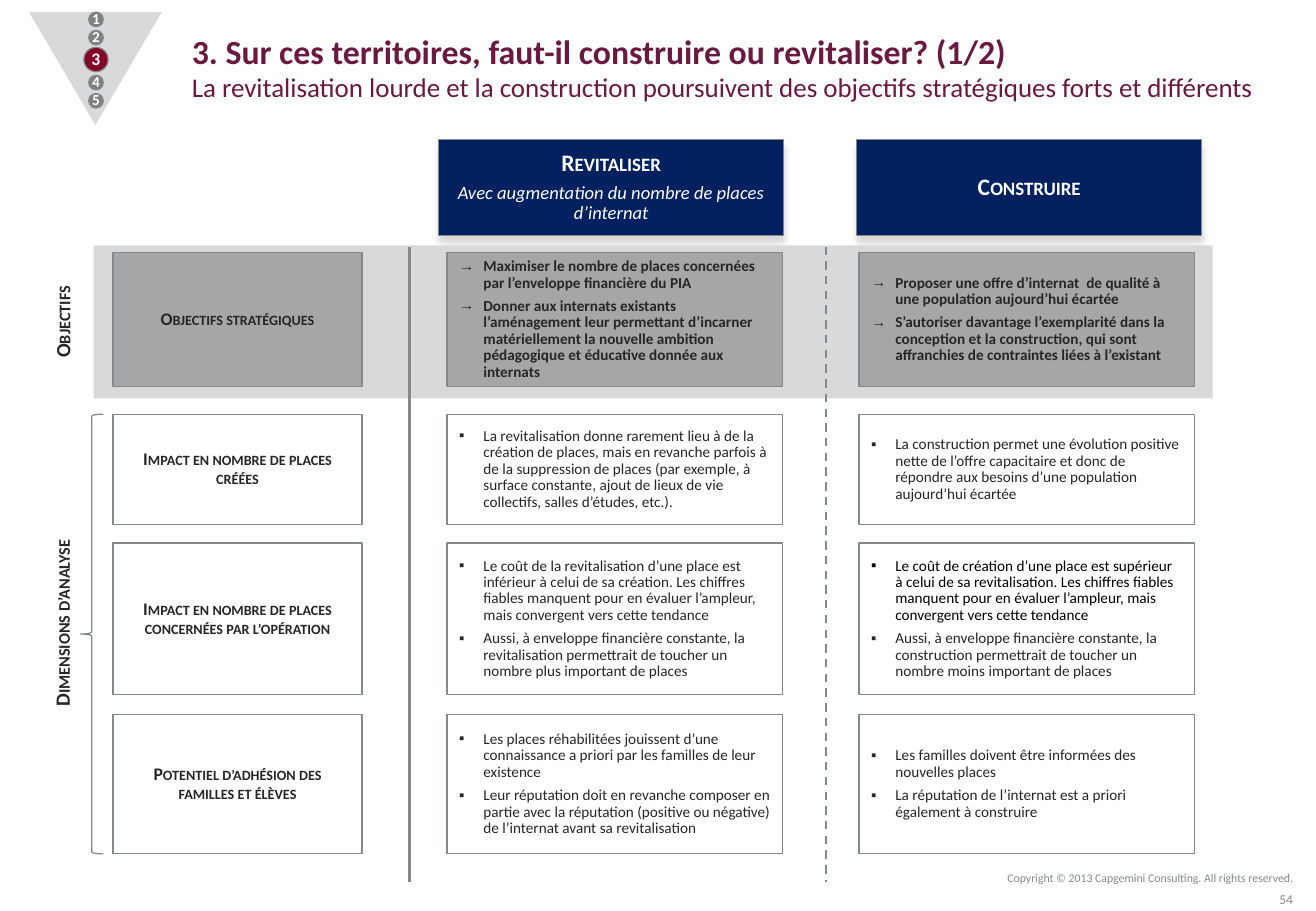
from lxml.etree import SubElement
from pptx import Presentation
from pptx.dml.color import RGBColor
from pptx.enum.dml import MSO_LINE
from pptx.enum.shapes import MSO_CONNECTOR, MSO_SHAPE
from pptx.enum.text import MSO_ANCHOR, PP_ALIGN
from pptx.oxml.ns import qn
from pptx.util import Inches, Pt

HUES = {"plum": "6A1A41", "edge": "85888B", "navy": "002060", "band": "D9D9D9",
        "goal": "A6A6A6", "white": "FFFFFF", "ink": "262626", "black": "000000",
        "red": "850027", "dot": "808080"}
LEFT, MID, RIGHT = PP_ALIGN.LEFT, PP_ALIGN.CENTER, PP_ALIGN.RIGHT


def hue(name):
    return RGBColor.from_string(HUES[name])


def draw(home, kind, at, fill=None, edge="edge"):
    """Add a preset shape, or a text box when kind is None."""
    frame = [Inches(v) for v in at]
    if kind is None:
        shape = home.add_textbox(*frame)
    else:
        shape = home.add_shape(kind, *frame)
        shape.shadow.inherit = False
        if fill:
            shape.fill.solid()
            shape.fill.fore_color.rgb = hue(fill)
        else:
            shape.fill.background()
        if edge:
            shape.line.color.rgb = hue(edge)
            shape.line.width = Pt(0.75)
        else:
            shape.line.fill.background()
    shape.text_frame.word_wrap = True
    shape.text_frame.vertical_anchor = MSO_ANCHOR.MIDDLE
    return shape


def write(shape, text, size, tone="ink", bold=False, italic=False, caps=False,
          align=MID, mark=None, lead=0.9, gap=4):
    """Append one paragraph, with small capitals or a bullet mark if asked."""
    frame = shape.text_frame
    first = not frame.text
    para = frame.paragraphs[0] if first else frame.add_paragraph()
    if mark:
        props = para._p.get_or_add_pPr()
        props.set("marL", str(Inches(0.2)))
        props.set("indent", str(-Inches(0.2)))
        SubElement(props, qn("a:buFont")).set("typeface", "Arial")
        SubElement(props, qn("a:buChar")).set("char", mark)
    para.alignment = align
    para.line_spacing = lead
    para.space_before = Pt(0 if first else gap)
    run = para.add_run()
    run.text = text
    font = run.font
    font.name, font.size, font.bold, font.italic = "Calibri", Pt(size), bold, italic
    font.color.rgb = hue(tone)
    if caps:
        run._r.get_or_add_rPr().set("cap", "small")


deck = Presentation()
deck.slide_width, deck.slide_height = Inches(10.83), Inches(7.5)
slide = deck.slides.add_slide(deck.slide_layouts[6])
shapes = slide.shapes
RECT = MSO_SHAPE.RECTANGLE

# Title and footer
title = draw(shapes, None, (1.48, 0.13, 9.35, 0.84))
for text, size, bold in [
        ("3. Sur ces territoires, faut-il construire ou revitaliser? (1/2)", 20, True),
        ("La revitalisation lourde et la construction poursuivent des objectifs "
         "stratégiques forts et différents", 16, False)]:
    write(title, text, size, "plum", bold, align=LEFT, lead=1, gap=0)
for text, size, at in [
        ("Copyright © 2013 Capgemini Consulting. All rights reserved.", 7,
         (7.57, 7.12, 3.17, 0.22)),
        ("54", 8, (8.21, 7.34, 2.53, 0.13))]:
    write(draw(shapes, None, at), text, size, "edge", align=RIGHT, lead=1)

# Column heads
for left, text, note in [
        (3.61, "Revitaliser", "Avec augmentation du nombre de places d’internat"),
        (7.05, "Construire", None)]:
    head = draw(shapes, RECT, (left, 1.15, 2.84, 0.79), "navy")
    effects = head._element.spPr.find(qn("a:effectLst"))
    shade = SubElement(effects, qn("a:outerShdw"), blurRad=str(Pt(4)),
                       dist=str(Pt(4)), dir="5400000", rotWithShape="0")
    SubElement(shade, qn("a:srgbClr")).set("val", HUES["band"])
    write(head, text, 14, "white", bold=True, caps=True)
    if note:
        write(head, note, 11, "white", italic=True)

# Band and column rules
draw(shapes, RECT, (0.77, 2.02, 9.21, 1.26), "band", None)
for x, width, dash in [(3.37, 2.25, None), (6.8, 1.25, MSO_LINE.DASH)]:
    rule = shapes.add_connector(MSO_CONNECTOR.STRAIGHT, Inches(x), Inches(2.03),
                                Inches(x), Inches(7.26))
    rule.line.color.rgb = hue("edge")
    rule.line.width = Pt(width)
    rule.line.dash_style = dash
    SubElement(rule._element.spPr, qn("a:effectLst"))

# Grid of cells
COLS = [(0.93, 2.05), (3.68, 2.76), (7.07, 2.76)]
ROWS = [(2.08, 1.1), (3.41, 0.91), (4.47, 1.25), (5.88, 1.15)]
CELLS = [
    ("Objectifs stratégiques",
     ["Maximiser le nombre de places concernées par l’enveloppe financière du PIA",
      "Donner aux internats existants l’aménagement leur permettant d’incarner "
      "matériellement la nouvelle ambition pédagogique et éducative donnée aux "
      "internats"],
     ["Proposer une offre d’internat  de qualité à une population aujourd’hui écartée",
      "S’autoriser davantage l’exemplarité dans la conception et la construction, "
      "qui sont affranchies de contraintes liées à l’existant"]),
    ("Impact en nombre de places créées",
     ["La revitalisation donne rarement lieu à de la création de places, mais en "
      "revanche parfois à de la suppression de places (par exemple, à surface "
      "constante, ajout de lieux de vie collectifs, salles d’études, etc.)."],
     ["La construction permet une évolution positive nette de l’offre capacitaire "
      "et donc de répondre aux besoins d’une population aujourd’hui écartée"]),
    ("Impact en nombre de places concernées par l’opération",
     ["Le coût de la revitalisation d’une place est inférieur à celui de sa "
      "création. Les chiffres fiables manquent pour en évaluer l’ampleur, mais "
      "convergent vers cette tendance",
      "Aussi, à enveloppe financière constante, la revitalisation permettrait de "
      "toucher un nombre plus important de places"],
     ["Le coût de création d’une place est supérieur à celui de sa "
      "revitalisation. Les chiffres fiables manquent pour en évaluer l’ampleur, "
      "mais convergent vers cette tendance",
      "Aussi, à enveloppe financière constante, la construction permettrait de "
      "toucher un nombre moins important de places"]),
    ("Potentiel d’adhésion des familles et élèves",
     ["Les places réhabilitées jouissent d’une connaissance a priori par les "
      "familles de leur existence",
      "Leur réputation doit en revanche composer en partie avec la réputation "
      "(positive ou négative) de l’internat avant sa revitalisation"],
     ["Les familles doivent être informées des nouvelles places",
      "La réputation de l’internat est a priori également à construire"]),
]
for row, ((top, high), (name, *lists)) in enumerate(zip(ROWS, CELLS)):
    goal = row == 0
    fill = "goal" if goal else "white"
    boxes = [draw(shapes, RECT, (left, top, wide, high), fill) for left, wide in COLS]
    write(boxes[0], name, 10.5, bold=True, caps=True)
    for col, (box, points) in enumerate(zip(boxes[1:], lists)):
        for n, point in enumerate(points):
            tone = "black" if (row, col, n) == (2, 1, 0) else "ink"
            write(box, point, 9, tone, bold=goal, align=LEFT,
                  mark="→" if goal else "▪")

# Side labels and brace
for text, at in [("Objectifs", (0.05, 2.51, 0.95, 0.28)),
                 ("Dimensions d’analyse", (-0.7, 4.99, 2.44, 0.28))]:
    side = draw(shapes, None, at)
    side.rotation = 270
    write(side, text, 12, bold=True, caps=True)
draw(shapes, MSO_SHAPE.LEFT_BRACE, (0.66, 3.41, 0.19, 3.62))

# Step marker
steps = shapes.add_group_shape().shapes
draw(steps, MSO_SHAPE.ISOSCELES_TRIANGLE, (0.24, 0.1, 1.09, 0.93), "band",
     None).rotation = 180
for step, mid in enumerate([0.16, 0.31, 0.49, 0.68, 0.83], 1):
    live = step == 3
    size = 0.2 if live else 0.12
    dot = draw(steps, MSO_SHAPE.OVAL, (0.79 - size / 2, mid - size / 2, size, size),
               "red" if live else "dot")
    frame = dot.text_frame
    frame.word_wrap = False
    frame.margin_left = frame.margin_right = frame.margin_top = frame.margin_bottom = 0
    write(dot, str(step), 10.5 if live else 9, "white", bold=True)

deck.save("out.pptx")
